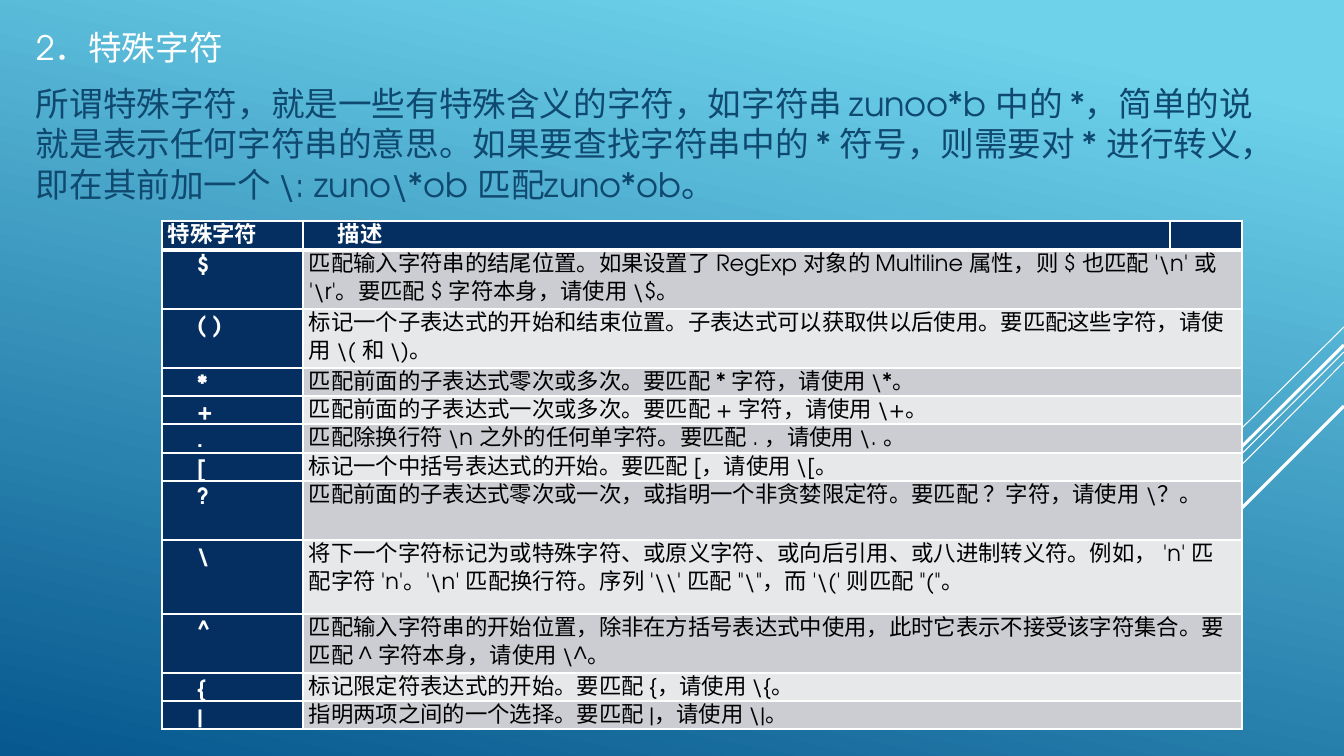
from dataclasses import dataclass

from lxml.etree import SubElement
from pptx import Presentation
from pptx.dml.color import RGBColor
from pptx.enum.shapes import MSO_CONNECTOR
from pptx.enum.text import MSO_ANCHOR, PP_ALIGN
from pptx.oxml.ns import qn
from pptx.util import Emu, Pt


@dataclass(frozen=True)
class Theme:
    font: str = "TeX Gyre Adventor"
    sky: str = "6ED2EB"
    sea: str = "06588E"
    white: str = "FFFFFF"
    black: str = "000000"
    intro: str = "0F496F"
    navy: str = "052F61"
    bands: tuple = ("CCCDD2", "E7E8EA")
    text_size: int = 24
    table_size: int = 16


theme = Theme()


def px(n):
    return Emu(round(n * 914400 / 100.8))


def style(p, size, color, spacing, bold=False):
    p.font.name = theme.font
    p.font.size = Pt(size)
    p.font.bold = bold
    p.font.color.rgb = RGBColor.from_string(color)
    p.line_spacing = Pt(spacing)
    p.alignment = PP_ALIGN.LEFT


prs = Presentation()
prs.slide_width, prs.slide_height = px(1344), px(756)
slide = prs.slides.add_slide(prs.slide_layouts[5])

fill = slide.background.fill
fill.gradient()
fill.gradient_angle = 258
for stop, position, color in zip(fill.gradient_stops, (0.1, 1), (theme.sky, theme.sea)):
    stop.position = position
    stop.color.rgb = RGBColor.from_string(color)

rays = [
    (327, 1243, 427, 0.75),
    (352, 1015, 680, 0.75),
    (362, 1135, 572, 0.75),
    (345, 1151, 537, 2.25),
    (406, 1204, 546, 2.25),
]
for y1, x2, y2, width in rays:
    line = slide.shapes.add_connector(MSO_CONNECTOR.STRAIGHT, px(1344), px(y1), px(x2), px(y2))
    line.line.color.rgb = RGBColor.from_string(theme.white)
    line.line.width = Pt(width)
    SubElement(line._element.spPr, qn("a:effectLst"))

title = slide.shapes.title
title.left, title.top, title.width, title.height = px(26), px(22), px(1262), px(50)
intro = slide.shapes.add_textbox(px(26), px(78), px(1262), px(132))
blocks = [
    (title, "2．特殊字符", theme.white),
    (
        intro,
        "所谓特殊字符，就是一些有特殊含义的字符，如字符串 zunoo*b 中的 *，简单的说就是表示任何字符串的意思。"
        "如果要查找字符串中的 * 符号，则需要对 * 进行转义，即在其前加一个 \\: zuno\\*ob 匹配zuno*ob。",
        theme.intro,
    ),
]
for sp, text, color in blocks:
    tf = sp.text_frame
    tf.word_wrap = True
    tf.vertical_anchor = MSO_ANCHOR.TOP
    tf.text = text
    style(tf.paragraphs[0], theme.text_size, color, 28.8)

rows = [
    (29, "特殊字符", "描述"),
    (59, "$", "匹配输入字符串的结尾位置。如果设置了 RegExp 对象的 Multiline 属性，则 $ 也匹配 '\\n' 或 '\\r'。要匹配 $ 字符本身，请使用 \\$。"),
    (59, "( )", "标记一个子表达式的开始和结束位置。子表达式可以获取供以后使用。要匹配这些字符，请使用 \\( 和 \\)。"),
    (28, "*", "匹配前面的子表达式零次或多次。要匹配 * 字符，请使用 \\*。"),
    (28, "+", "匹配前面的子表达式一次或多次。要匹配 + 字符，请使用 \\+。"),
    (29, ".", "匹配除换行符 \\n 之外的任何单字符。要匹配 . ，请使用 \\. 。"),
    (28, "[", "标记一个中括号表达式的开始。要匹配 [，请使用 \\[。"),
    (59, "?", "匹配前面的子表达式零次或一次，或指明一个非贪婪限定符。要匹配 ？字符，请使用 \\？。"),
    (74, "\\", "将下一个字符标记为或特殊字符、或原义字符、或向后引用、或八进制转义符。例如， 'n' 匹配字符 'n'。'\\n' 匹配换行符。序列 '\\\\' 匹配 \"\\\"，而 '\\(' 则匹配 \"(\"。"),
    (59, "^", "匹配输入字符串的开始位置，除非在方括号表达式中使用，此时它表示不接受该字符集合。要匹配 ^ 字符本身，请使用 \\^。"),
    (28, "{", "标记限定符表达式的开始。要匹配 {，请使用 \\{。"),
    (28, "|", "指明两项之间的一个选择。要匹配 |，请使用 \\|。"),
]
col_widths = (141, 867, 72)
height = sum(row[0] for row in rows)
table = slide.shapes.add_table(
    len(rows), len(col_widths), px(162), px(221), px(sum(col_widths)), px(height)
).table
table.horz_banding = False
for col, width in zip(table.columns, col_widths):
    col.width = px(width)

for i, (row_height, symbol, description) in enumerate(rows):
    table.rows[i].height = px(row_height)
    if i:
        table.cell(i, 1).merge(table.cell(i, 2))
    for j, text in enumerate((symbol, description, "")):
        cell = table.cell(i, j)
        cell.margin_left = cell.margin_right = px(6)
        cell.margin_top = cell.margin_bottom = 0
        strong = i == 0 or j == 0
        tcPr = cell._tc.get_or_add_tcPr()
        for side in ("lnL", "lnR", "lnT", "lnB"):
            thick = (i, side) in ((0, "lnB"), (1, "lnT"))
            ln = SubElement(tcPr, qn("a:" + side), w=str(Pt(3 if thick else 1)))
            SubElement(SubElement(ln, qn("a:solidFill")), qn("a:srgbClr"), val=theme.white)
        cell.fill.solid()
        cell.fill.fore_color.rgb = RGBColor.from_string(theme.navy if strong else theme.bands[(i - 1) % 2])
        p = cell.text_frame.paragraphs[0]
        if text:
            p.text = text
        style(p, theme.table_size, theme.white if strong else theme.black, 20, strong)
        if strong and (i, j) != (0, 0):
            p._p.get_or_add_pPr().set("indent", str(px(29)))

prs.save("out.pptx")
